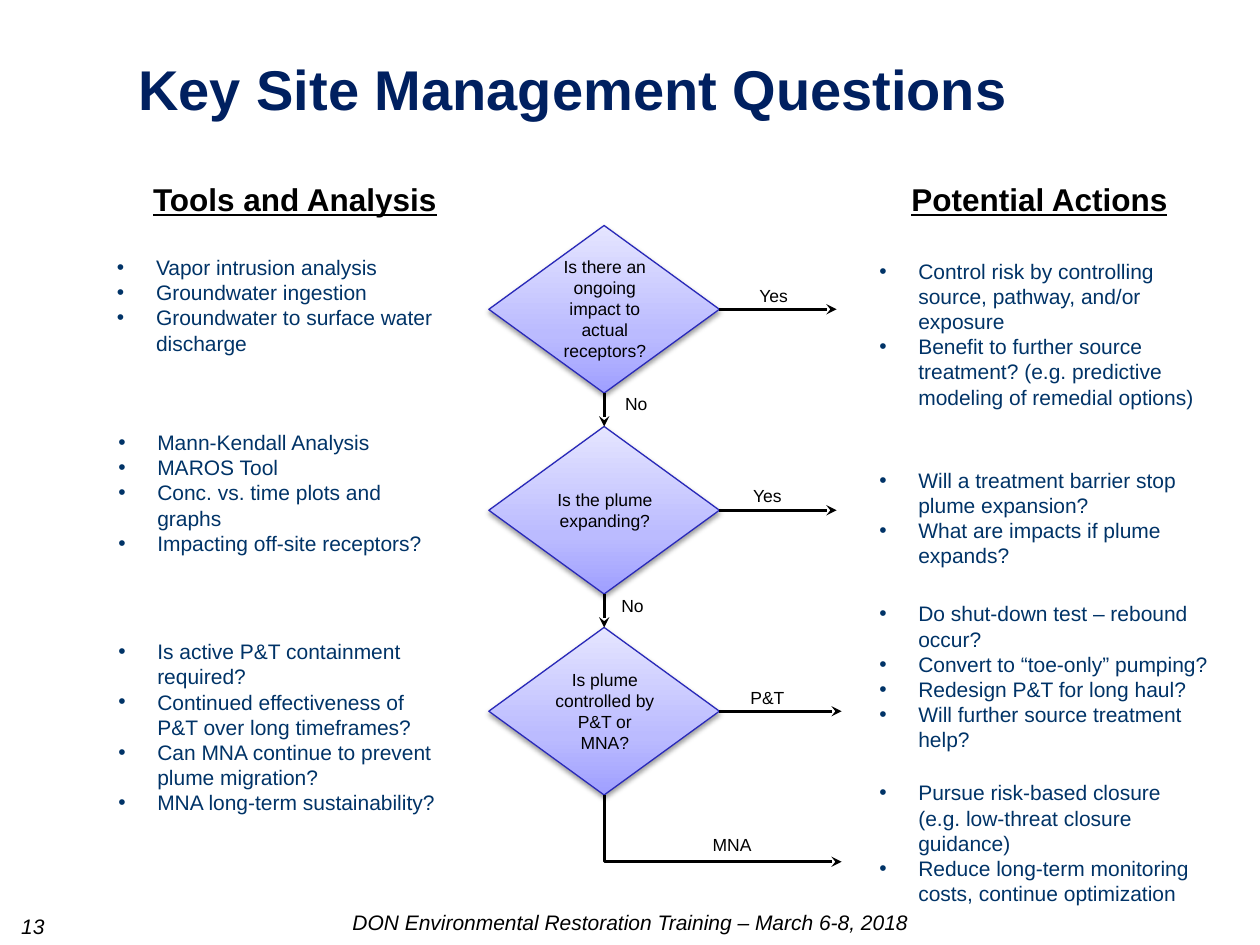
from copy import deepcopy

from lxml import etree
from pptx import Presentation
from pptx.dml.color import RGBColor
from pptx.enum.shapes import MSO_CONNECTOR, MSO_SHAPE
from pptx.enum.text import MSO_AUTO_SIZE, PP_ALIGN
from pptx.oxml.ns import qn
from pptx.util import Inches, Pt

DIAMOND = MSO_SHAPE.DIAMOND
STRAIGHT, ELBOW = MSO_CONNECTOR.STRAIGHT, MSO_CONNECTOR.ELBOW
LEFT, CENTER = PP_ALIGN.LEFT, PP_ALIGN.CENTER
GROW, FIXED = MSO_AUTO_SIZE.SHAPE_TO_FIT_TEXT, MSO_AUTO_SIZE.NONE

COLORS = {"title": "002060", "body": "003367", "ink": "000000", "edge": "2929B8",
          "deep": "9F9FFF", "mid": "BBBBFF", "pale": "E5E5FF"}
GRADIENT = [(0, "deep"), (0.35, "mid"), (1, "pale")]
COLS, ROWS = 100, 75


def rgb(name):
    return RGBColor.from_string(COLORS[name])


class FlowSlide:
    """Draws flowchart elements on one slide, placed on a 100 by 75 grid."""

    def __init__(self, prs, font="Arial"):
        self.slide = prs.slides.add_slide(prs.slide_layouts[6])
        self.shapes = self.slide.shapes
        self.font = font
        self.col, self.row = prs.slide_width / COLS, prs.slide_height / ROWS

    def place(self, x, y, w, h):
        return [round(v * unit) for v, unit in
                zip((x, y, w, h), (self.col, self.row) * 2)]

    def text(self, box, text, size, color="ink", align=LEFT, fit=GROW, wrap=True,
             bold=None, italic=None, underline=None, bullets=False):
        tf = self.shapes.add_textbox(*self.place(*box)).text_frame
        tf.word_wrap, tf.auto_size = wrap, fit
        tf.text = text
        for p in tf.paragraphs:
            p.alignment = align
            if bullets:
                self.bullet(p)
            for r in p.runs:
                r.font.name, r.font.size = self.font, Pt(size)
                r.font.color.rgb = rgb(color)
                r.font.bold, r.font.italic = bold, italic
                r.font.underline = underline

    def bullet(self, p):
        pPr = p._p.get_or_add_pPr()
        pPr.set("marL", str(Inches(0.38)))
        pPr.set("indent", str(Inches(-0.31)))
        etree.SubElement(pPr, qn("a:buFont"), typeface=self.font)
        etree.SubElement(pPr, qn("a:buChar"), char="•")

    def bullets(self, x, y, items):
        self.text((x, y, 28.8, 14.2), "\n".join(items), 12, "body", fit=FIXED, bullets=True)

    def heading(self, x, text):
        self.text((x, 13.8, 30.2, 4), text, 18, align=CENTER, bold=True, underline=True)

    def label(self, x, y, text, h=2.7):
        self.text((x, y, 10, h), text, 10, align=CENTER)

    def decision(self, x, y, w, h):
        sp = self.shapes.add_shape(DIAMOND, *self.place(x, y, w, h))
        sp.fill.gradient()
        sp.fill.gradient_angle = 90
        stops = sp._element.spPr.find(".//" + qn("a:gsLst"))
        stops.insert(1, deepcopy(stops[0]))
        for stop, (position, color) in zip(sp.fill.gradient_stops, GRADIENT):
            stop.position, stop.color.rgb = position, rgb(color)
        sp.line.color.rgb, sp.line.width = rgb("edge"), Pt(0.75)
        sp.shadow.inherit = False
        shadow = etree.SubElement(
            sp._element.spPr.find(qn("a:effectLst")), qn("a:outerShdw"),
            blurRad=str(Pt(3.1)), dist=str(Pt(1.6)), dir="5400000", rotWithShape="0")
        black = etree.SubElement(shadow, qn("a:srgbClr"), val=COLORS["ink"])
        etree.SubElement(black, qn("a:alpha"), val="38000")

    def arrow(self, x1, y1, x2, y2, kind=STRAIGHT):
        line = self.shapes.add_connector(kind, *self.place(x1, y1, x2, y2))
        line.line.color.rgb, line.line.width = rgb("ink"), Pt(1.75)
        etree.SubElement(line.line._get_or_add_ln(), qn("a:tailEnd"), type="stealth")
        etree.SubElement(line._element.spPr, qn("a:effectLst"))
        return line

    def corner_arrow(self, x1, y1, x2, y2):
        cx, cy = (x1 + x2) / 2, (y1 + y2) / 2
        dx, dy = (y2 - y1) / 2, (x2 - x1) / 2
        spPr = self.arrow(cx + dx, cy - dy, cx - dx, cy + dy, ELBOW)._element.spPr
        spPr.find(qn("a:xfrm")).set("rot", "16200000")
        spPr.find(qn("a:prstGeom")).set("prst", "bentConnector2")


QUESTIONS = [("Is there an ongoing impact to actual receptors?", 9.4),
             ("Is the plume expanding?", 4.4),
             ("Is plume controlled by P&T or MNA?", 7.7)]
LABELS = [(45.5, 30.7, "No"), (45.2, 46.7, "No"), (55.9, 54, "P&T"),
          (53.1, 65.7, "MNA"), (55.9, 38, "Yes"), (56.4, 22.1, "Yes")]
TOOLS = [
    (7.6, 19.7, ["Vapor intrusion analysis", "Groundwater ingestion",
                 "Groundwater to surface water discharge"]),
    (7.7, 33.6, ["Mann-Kendall Analysis", "MAROS Tool",
                 "Conc. vs. time plots and graphs", "Impacting off-site receptors?"]),
    (7.7, 50.2, ["Is active P&T containment required?",
                 "Continued effectiveness of P&T over long timeframes?",
                 "Can MNA continue to prevent plume migration?",
                 "MNA long-term sustainability?"]),
]
ACTIONS = [
    (68.1, 20, ["Control risk by controlling source, pathway, and/or exposure",
                "Benefit to further source treatment? "
                "(e.g. predictive modeling of remedial options)"]),
    (68.1, 36.6, ["Will a treatment barrier stop plume expansion?",
                  "What are impacts if plume expands?"]),
    (68.1, 47.2, ["Do shut-down test – rebound occur?", "Convert to “toe-only” pumping?",
                  "Redesign P&T for long haul?", "Will further source treatment help?"]),
    (68.1, 61.4, ["Pursue risk-based closure (e.g. low-threat closure guidance)",
                  "Reduce long-term monitoring costs, continue optimization"]),
]
NODE_X, NODE_W, NODE_H = 38.8, 18.3, 13.3
NODE_TOPS = [17.9 + 15.95 * i for i in range(len(QUESTIONS))]
ARROW_ENDS = [66.4, 66.4, 66.8]


def main():
    prs = Presentation()
    prs.slide_width, prs.slide_height = Inches(10), Inches(7.5)
    s = FlowSlide(prs)
    s.text((0.7, 72, 10.7, 3.4), "13", 12, fit=FIXED, italic=True)
    s.text((21.7, 71.7, 56.7, 3), "DON Environmental Restoration Training – March 6-8, 2018",
           12, align=CENTER, italic=True)
    s.text((10, 3.8, 71.5, 6.4), "Key Site Management Questions", 32, "title",
           wrap=False, bold=True)

    center, right = NODE_X + NODE_W / 2, NODE_X + NODE_W
    for top, end, (question, height) in zip(NODE_TOPS, ARROW_ENDS, QUESTIONS):
        middle = top + NODE_H / 2
        s.decision(NODE_X, top, NODE_W, NODE_H)
        s.label(43, middle - height / 2, question, height)
        s.arrow(right, middle, end, middle)
    for top, following in zip(NODE_TOPS, NODE_TOPS[1:]):
        s.arrow(center, top + NODE_H, center, following)
    s.corner_arrow(center, NODE_TOPS[-1] + NODE_H, ARROW_ENDS[-1], 68.4)

    for x, y, text in LABELS:
        s.label(x, y, text)
    s.heading(8.3, "Tools and Analysis")
    s.heading(67.4, "Potential Actions")
    for x, y, items in TOOLS + ACTIONS:
        s.bullets(x, y, items)
    prs.save("out.pptx")


if __name__ == "__main__":
    main()
